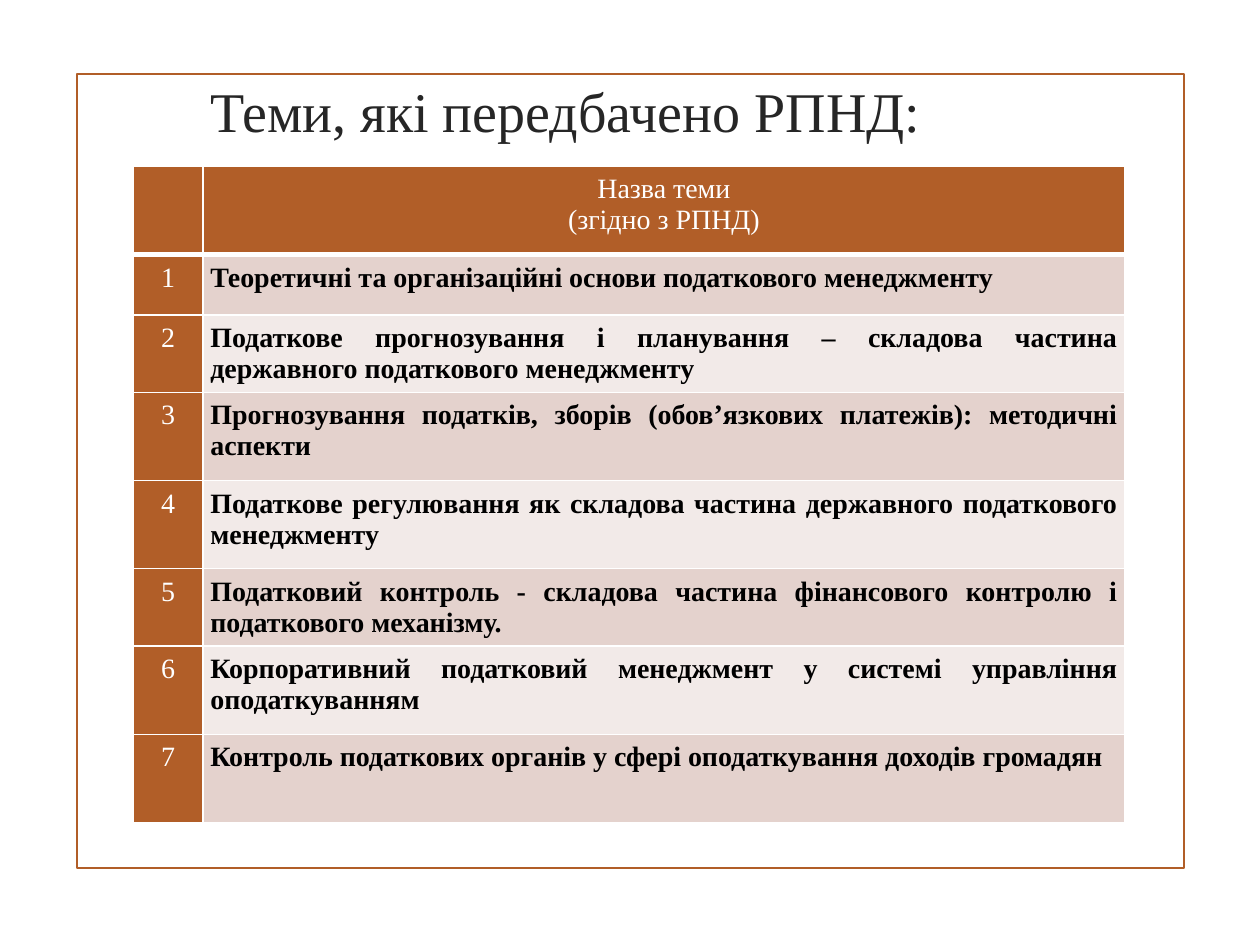
from lxml import etree
from pptx import Presentation
from pptx.dml.color import RGBColor
from pptx.enum import shapes, text
from pptx.oxml import parse_xml
from pptx.oxml.ns import nsdecls, qn
from pptx.util import Inches, Pt

FONT = "Times New Roman"
RUST, WHITE = "B15E28", "FFFFFF"
BANDS = ("E4D2CD", "F2EAE8")
HEAD = "Назва теми\n(згідно з РПНД)"
TOPICS = [
    "Теоретичні та організаційні основи податкового менеджменту",
    "Податкове прогнозування і планування – складова частина державного податкового менеджменту",
    "Прогнозування податків, зборів (обов’язкових платежів): методичні аспекти",
    "Податкове регулювання як складова частина державного податкового менеджменту",
    "Податковий контроль - складова частина фінансового контролю і податкового механізму.",
    "Корпоративний податковий менеджмент у системі управління оподаткуванням",
    "Контроль податкових органів у сфері оподаткування доходів громадян",
]
COLS = (0.55, 7.32)
ROWS = (0.7, 0.48, 0.47, 0.7, 0.7, 0.42, 0.7, 0.7)


def paint(fill, color):
    fill.solid()
    fill.fore_color.rgb = RGBColor.from_string(color)


def write(frame, words, size, color, align, bold=False):
    frame.text = words
    for par in frame.paragraphs:
        par.alignment = align
        for run in par.runs:
            run.font.name = FONT
            run.font.size = Pt(size)
            run.font.bold = bold
            run.font.color.rgb = RGBColor.from_string(color)


def add_frame(slide, box):
    rect = slide.shapes.add_shape(shapes.MSO_SHAPE.RECTANGLE, *map(Inches, box))
    rect.shadow.inherit = False
    rect.fill.background()
    paint(rect.line.fill, RUST)
    rect.line.width = Pt(1.25)


def add_title(slide, box):
    title = slide.shapes.title
    title.left, title.top, title.width, title.height = map(Inches, box)
    frame = title.text_frame
    frame.auto_size = text.MSO_AUTO_SIZE.NONE
    frame.vertical_anchor = text.MSO_ANCHOR.MIDDLE
    write(frame, "Теми, які передбачено РПНД:", 32, "262626", text.PP_ALIGN.CENTER)
    shadow = parse_xml(
        f'<a:effectLst {nsdecls("a")}><a:outerShdw blurRad="50800" dist="38100" dir="2700000">'
        '<a:srgbClr val="000000"><a:alpha val="40000"/></a:srgbClr></a:outerShdw></a:effectLst>')
    props = frame.paragraphs[0].runs[0].font._element
    props.find(qn("a:solidFill")).addnext(shadow)


def add_edges(cell, top, bottom):
    """Draw white borders; top and bottom are widths in points."""
    props = cell._tc.get_or_add_tcPr()
    for spot, (side, width) in enumerate(zip("LRTB", (1, 1, top, bottom))):
        line = etree.Element(qn(f"a:ln{side}"), w=str(Pt(width)))
        fill = etree.SubElement(line, qn("a:solidFill"))
        etree.SubElement(fill, qn("a:srgbClr"), val=WHITE)
        props.insert(spot, line)


def add_topics(slide, box):
    table = slide.shapes.add_table(len(ROWS), len(COLS), *map(Inches, box)).table
    for col, width in zip(table.columns, COLS):
        col.width = Inches(width)
    for row, height in zip(table.rows, ROWS):
        row.height = Inches(height)
    lines = [("", HEAD)] + [(str(n), topic) for n, topic in enumerate(TOPICS, 1)]
    for r, line in enumerate(lines):
        for c, words in enumerate(line):
            cell = table.cell(r, c)
            topic = r > 0 and c == 1
            cell.margin_left = cell.margin_right = Inches(0.06)
            cell.margin_top = cell.margin_bottom = Inches(0.06)
            paint(cell.fill, BANDS[(r - 1) % 2] if topic else RUST)
            align = text.PP_ALIGN.JUSTIFY if topic else text.PP_ALIGN.CENTER
            write(cell.text_frame, words, 16, "000000" if topic else WHITE, align, topic)
            add_edges(cell, 3 if r == 1 else 1, 3 if r == 0 else 1)


def main():
    deck = Presentation()
    deck.slide_width, deck.slide_height = Inches(10), Inches(7.5)
    slide = deck.slides.add_slide(deck.slide_layouts[5])
    paint(slide.background.fill, WHITE)
    add_frame(slide, (0.61, 0.59, 8.79, 6.3))
    add_title(slide, (0.35, 0.52, 8.28, 0.71))
    add_topics(slide, (1.06, 1.32, sum(COLS), sum(ROWS)))
    deck.save("out.pptx")


if __name__ == "__main__":
    main()
